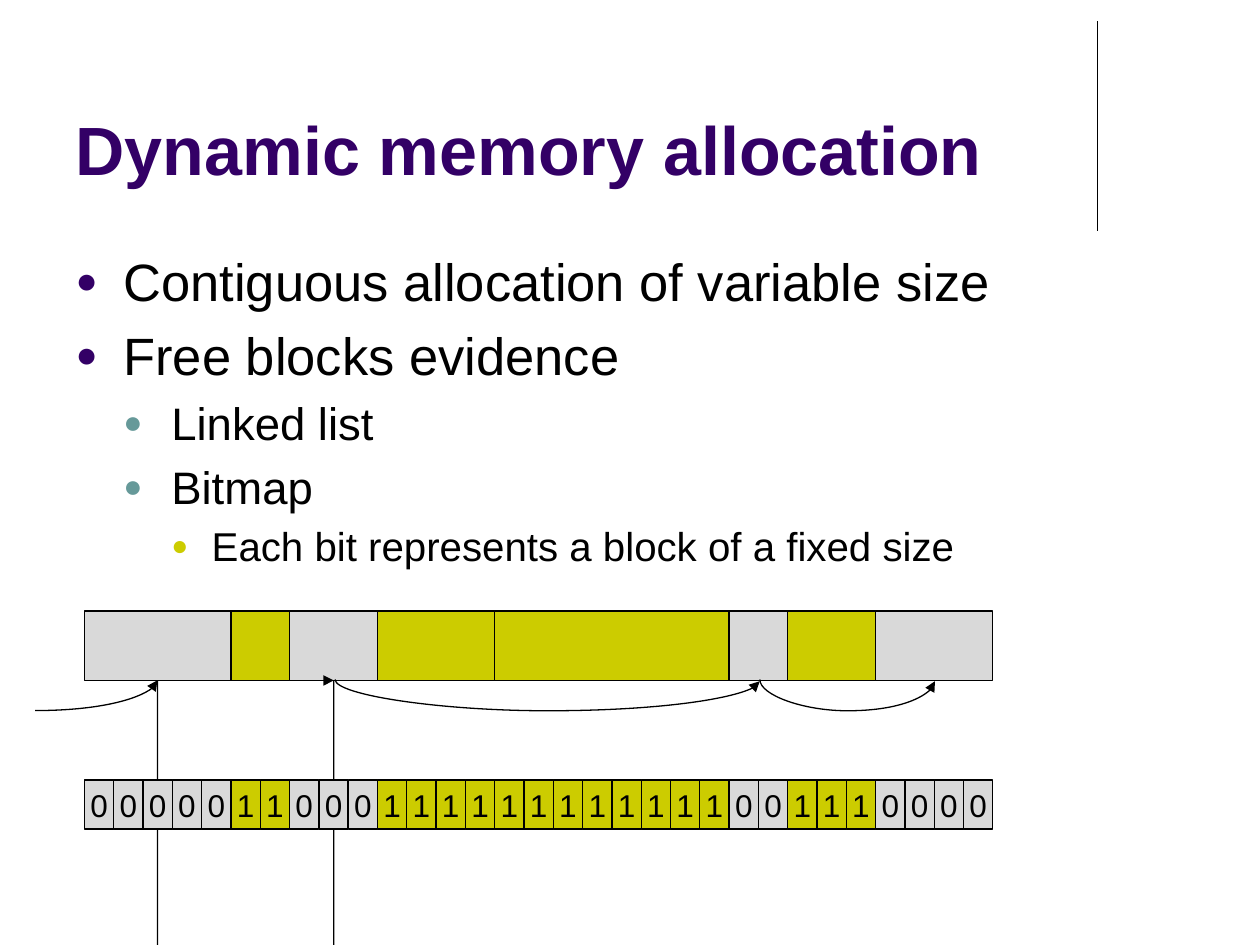
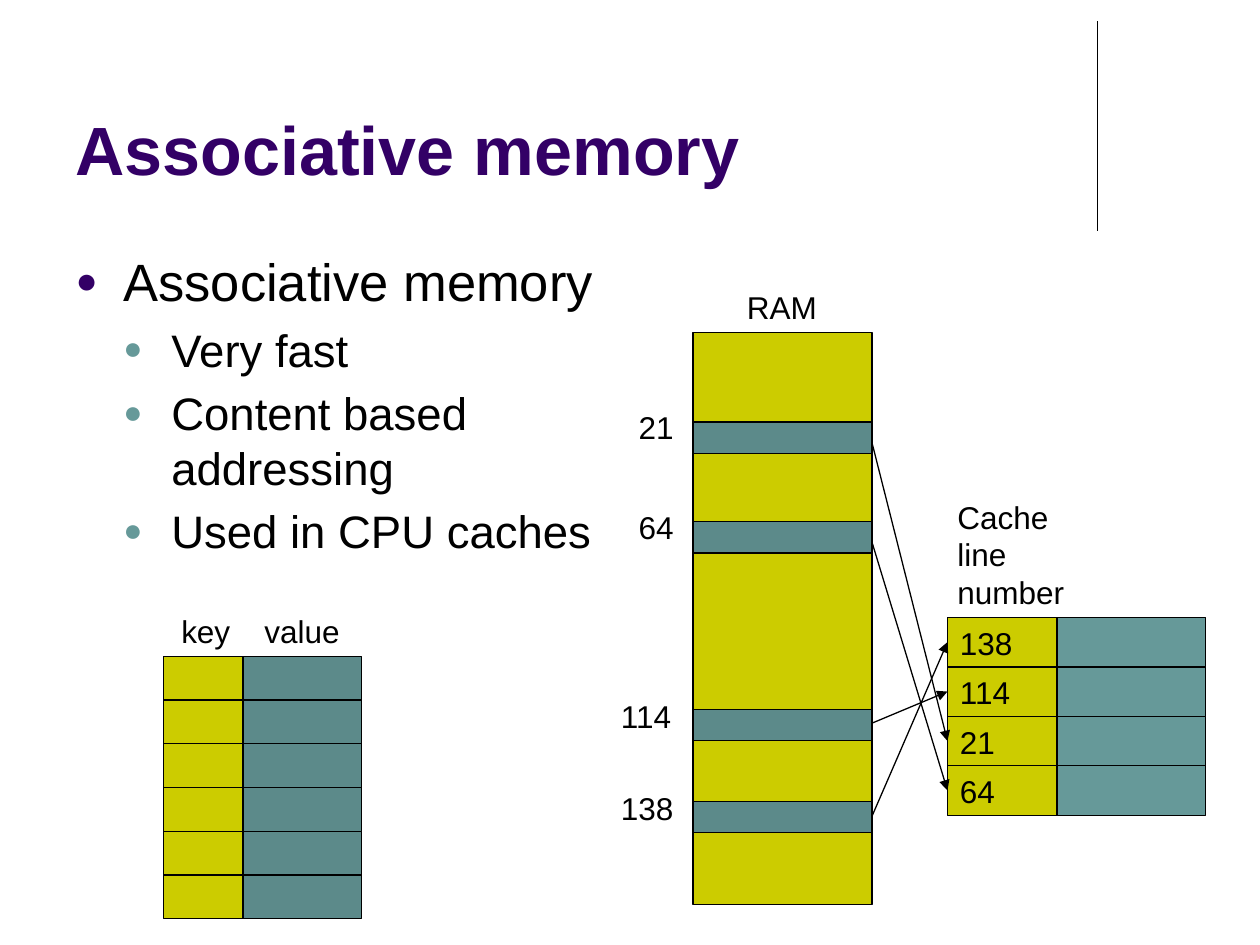
from dataclasses import dataclass
from itertools import accumulate

from pptx import Presentation
from pptx import util as u
from pptx.dml.color import RGBColor
from pptx.enum import shapes, text
from pptx.oxml import ns, xmlchemy

PX = u.Inches(1) // 100
BOX_TOP, BOX_LEFT = 0, 1


@dataclass(frozen=True)
class Theme:
    """Colours, font and type sizes of the deck."""
    title: str = "330066"
    ink: str = "000000"
    used: str = "CCCC00"
    free: str = "D9D9D9"
    teal: str = "669999"
    deep_teal: str = "5C8A8A"
    font: str = "Arial"
    title_size: int = 39
    label_size: int = 18
    line_width: float = 0.75
    level_sizes: tuple = (30, 26, 23)
    bullets: tuple = ("330066", "669999", "CCCC00")
    indents: tuple = ((38, 38), (76, 38), (108, 32))


THEME = Theme()


def px(*lengths):
    """Turn px lengths into EMU."""
    return [round(length * PX) for length in lengths]


def apply(target, values):
    """Set each attribute of the target from a dict."""
    for name, value in values.items():
        setattr(target, name, value)


def style_font(font, size, color=THEME.ink, bold=False):
    """Give a font the deck's face, a size and a colour."""
    apply(font, {"name": THEME.font, "size": u.Pt(size), "bold": bold})
    font.color.rgb = RGBColor.from_string(color)


def add_element(parent, tag, **attributes):
    """Append a drawing element with attributes."""
    child = xmlchemy.OxmlElement(tag)
    for name, value in attributes.items():
        child.set(name, str(value))
    parent.append(child)
    return child


def style_line(line):
    """Draw a line thin and black."""
    line.color.rgb = RGBColor.from_string(THEME.ink)
    line.width = u.Pt(THEME.line_width)


def finish_connector(connector, arrow=True):
    """Style a connector, with an arrowhead if wanted and no shadow."""
    style_line(connector.line)
    properties = connector._element.spPr
    if arrow:
        add_element(properties.find(ns.qn("a:ln")), "a:tailEnd", type="triangle")
    add_element(properties, "a:effectLst")
    return connector


def write_label(shape, words, align, frame_values):
    """Write one paragraph of label text into a shape."""
    frame = shape.text_frame
    apply(frame, {"word_wrap": False, **frame_values})
    para = frame.paragraphs[0]
    para.text = words
    para.alignment = align
    style_font(para.font, THEME.label_size)


def add_block(page, box, color):
    """Add an outlined rectangle."""
    block = page.shapes.add_shape(shapes.MSO_SHAPE.RECTANGLE, *px(*box))
    block.shadow.inherit = False
    block.fill.solid()
    block.fill.fore_color.rgb = RGBColor.from_string(color)
    style_line(block.line)
    return block


def add_label(page, box, words):
    """Add a free label that fits its text."""
    label = page.shapes.add_textbox(*px(*box))
    write_label(label, words, text.PP_ALIGN.LEFT,
                {"auto_size": text.MSO_AUTO_SIZE.SHAPE_TO_FIT_TEXT})


def add_column(page, box, rows, color):
    """Stack equal cells in a box and return them."""
    left, top, width, height = box
    step = height / rows
    return [add_block(page, (left, top + row * step, width, step), color)
            for row in range(rows)]


def add_arc(page, start, end, middle, drop, depth=25):
    """Hang a curved arrow below two points whose heights differ by a drop."""
    span, sag = px(end - start, depth)
    centre_x, centre_y = px((start + end) / 2, middle)
    left, top = centre_x - drop // 2, centre_y - span // 2
    arc = page.shapes.add_connector(shapes.MSO_CONNECTOR.CURVE, left, top,
                                    left + drop, top + span)
    properties = arc._element.spPr
    apply_xml = properties.xfrm.set
    apply_xml("rot", "16200000")
    apply_xml("flipH", "1")
    guides = properties.find(ns.qn("a:prstGeom")).find(ns.qn("a:avLst"))
    add_element(guides, "a:gd", name="adj1", fmla=f"val {sag * 100000 // drop}")
    finish_connector(arc)


def add_entry_arrow(page, start, end):
    """Add the curved arrow that leads to the head of the list."""
    arrow = page.shapes.add_connector(shapes.MSO_CONNECTOR.CURVE, *px(*start, *end))
    arrow._element.spPr.find(ns.qn("a:prstGeom")).set("prst", "curvedConnector2")
    finish_connector(arrow)


def fill_title(page, words):
    """Place and style the title."""
    title = page.shapes.title
    apply(title, dict(zip(("left", "top", "width", "height"), px(50, 13, 825, 142))))
    apply(title.text_frame, {"text": words, "vertical_anchor": text.MSO_ANCHOR.BOTTOM,
                             "auto_size": text.MSO_AUTO_SIZE.NONE})
    para = title.text_frame.paragraphs[0]
    para.alignment = text.PP_ALIGN.LEFT
    style_font(para.font, THEME.title_size, THEME.title, True)


def fill_list(page, box, items):
    """Place the body and write its bulleted items, given as level and words."""
    body = page.placeholders[1]
    apply(body, dict(zip(("left", "top", "width", "height"), px(*box))))
    frame = body.text_frame
    apply(frame, {"auto_size": text.MSO_AUTO_SIZE.NONE, "margin_top": px(10)[0]})
    for index, (level, words) in enumerate(items):
        para = frame.add_paragraph() if index else frame.paragraphs[0]
        apply(para, {"text": words, "level": level})
        properties = para._p.get_or_add_pPr()
        margin, hang = px(*THEME.indents[level])
        properties.set("marL", str(margin))
        properties.set("indent", str(-hang))
        color = add_element(properties, "a:buClr")
        add_element(color, "a:srgbClr", val=THEME.bullets[level])
        add_element(properties, "a:buSzPct", val=70000)
        add_element(properties, "a:buFont", typeface=THEME.font)
        add_element(properties, "a:buChar", char="●")
        style_font(para.font, THEME.level_sizes[level])
    frame.paragraphs[0].space_before = u.Pt(0)


def add_page(deck, title, list_box, items):
    """Add a page with its title and list."""
    page = deck.slides.add_slide(deck.slide_layouts[1])
    fill_title(page, title)
    fill_list(page, list_box, items)
    return page


def add_master_rule(deck, page):
    """Put the vertical rule on the master."""
    rule = page.shapes.add_connector(shapes.MSO_CONNECTOR.STRAIGHT,
                                     *px(871, 17, 871, 183))
    finish_connector(rule, arrow=False)
    deck.slide_master.shapes._spTree.append(rule._element)


def add_memory_row(page, box, runs, bit_width):
    """Draw memory blocks from runs of block length and bit."""
    left, top, _, height = box
    starts = accumulate((length for length, _ in runs), initial=0)
    for start, (length, bit) in zip(starts, runs):
        add_block(page, (left + start * bit_width, top, length * bit_width, height),
                  THEME.used if bit else THEME.free)


def add_bitmap(page, box, bits, bit_width):
    """Draw one numbered cell for each bit."""
    left, top, _, height = box
    for index, bit in enumerate(bits):
        cell = add_block(page, (left + index * bit_width, top, bit_width, height),
                         THEME.used if bit else THEME.free)
        margins = dict.fromkeys(
            ("margin_left", "margin_top", "margin_right", "margin_bottom"), 0)
        write_label(cell, str(bit), text.PP_ALIGN.CENTER,
                    {"vertical_anchor": text.MSO_ANCHOR.MIDDLE, **margins})


def build_allocation(deck):
    """Build the page on dynamic allocation."""
    page = add_page(deck, "Dynamic memory allocation", (50, 188, 900, 281), (
        (0, "Contiguous allocation of variable size"),
        (0, "Free blocks evidence"),
        (1, "Linked list"),
        (1, "Bitmap"),
        (2, "Each bit represents a block of a fixed size")))
    add_master_rule(deck, page)
    runs = ((5, 0), (2, 1), (3, 0), (4, 1), (8, 1), (2, 0), (3, 1), (4, 0))
    bits = [bit for length, bit in runs for _ in range(length)]
    left, width = 67, 721
    bit_width = width / len(bits)
    add_memory_row(page, (left, 485, width, 55), runs, bit_width)
    add_arc(page, 125, 265, 540, 1)
    for start, end in ((266, 603), (603, 742)):
        add_arc(page, start, end, 540, u.Pt(1))
    add_entry_arrow(page, (28, 564), (125, 540))
    add_bitmap(page, (left, 619, width, 39), bits, bit_width)
    return page


def add_key_value(page, box):
    """Draw the key and value columns with headings."""
    left, top, width, height = box
    key_width = 63
    add_label(page, (left + 4, top - 40, 59, 40), "key")
    add_label(page, (left + 70, top - 40, 81, 40), "value")
    add_column(page, (left, top, key_width, height), 6, THEME.used)
    add_column(page, (left + key_width, top, width - key_width, height), 6,
               THEME.deep_teal)


def add_ram(page, box, stripes):
    """Draw the RAM with its cached stripes and return the arrow starts."""
    left, top, width, _ = box
    add_block(page, box, THEME.used)
    add_label(page, (left + 33, top - 40, 76, 40), "RAM")
    starts = {}
    for words, offset, label_box, start in stripes:
        add_block(page, (left, top + offset, width, 25), THEME.deep_teal)
        shift, rise, label_width = label_box
        add_label(page, (left - shift, top + offset - rise, label_width, 40), words)
        starts[words] = (left + width, top + start)
    return starts


def add_cache(page, box, lines):
    """Draw the cache lines and return the cells by number."""
    left, top, width, height = box
    key_width = 87
    add_label(page, (left - 2, top - 100, 106, 101), "Cache\nline\nnumber")
    cells = add_column(page, (left, top, key_width, height), len(lines), THEME.used)
    for cell, words in zip(cells, lines):
        write_label(cell, words, text.PP_ALIGN.LEFT,
                    {"vertical_anchor": text.MSO_ANCHOR.TOP})
    add_column(page, (left + key_width, top, width - key_width, height), len(lines),
               THEME.teal)
    return dict(zip(lines, cells))


def build_associative(deck):
    """Build the page on associative memory."""
    page = add_page(deck, "Associative memory", (50, 188, 442, 274), (
        (0, "Associative memory"),
        (1, "Very fast"),
        (1, "Content based addressing"),
        (1, "Used in CPU caches")))
    starts = add_ram(page, (550, 264, 142, 454), (
        ("21", 71, (53, 16, 48), 87),
        ("64", 150, (53, 16, 48), 166),
        ("114", 299, (67, 15, 60), 310),
        ("138", 372, (67, 15, 62), 384)))
    add_key_value(page, (130, 521, 157, 208))
    cells = add_cache(page, (752, 490, 205, 157), ("138", "114", "21", "64"))
    for words, start in starts.items():
        arrow = page.shapes.add_connector(shapes.MSO_CONNECTOR.STRAIGHT,
                                          *px(*start, *start))
        arrow.end_connect(cells[words], BOX_LEFT)
        finish_connector(arrow)


def main():
    """Build and save the deck."""
    deck = Presentation()
    apply(deck, {"slide_width": u.Inches(10), "slide_height": u.Inches(7.5)})
    build_allocation(deck)
    build_associative(deck)
    deck.save("out.pptx")


if __name__ == "__main__":
    main()
